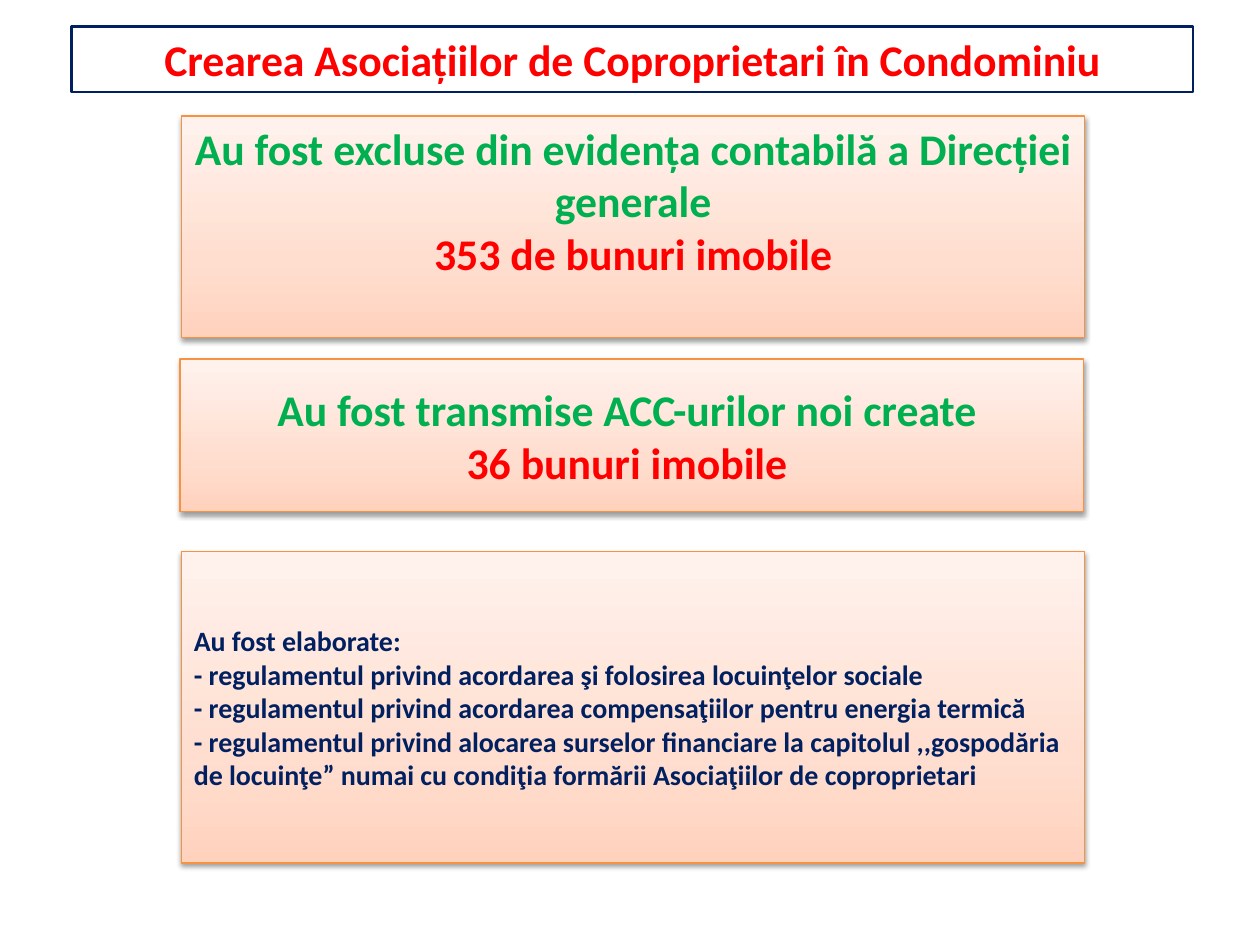
import copy

import lxml.etree
import pptx
import pptx.dml.color
import pptx.enum.shapes
import pptx.enum.text
import pptx.oxml.ns
import pptx.util

Inches = pptx.util.Inches
Pt = pptx.util.Pt
RGBColor = pptx.dml.color.RGBColor
ALIGN = pptx.enum.text.PP_ALIGN
qn = pptx.oxml.ns.qn

RED = RGBColor(0xFF, 0x00, 0x00)
GREEN = RGBColor(0x00, 0xB0, 0x50)
NAVY = RGBColor(0x00, 0x20, 0x60)
ORANGE = RGBColor(0xF6, 0x92, 0x40)
BLACK = RGBColor(0x00, 0x00, 0x00)
PEACH_STOPS = (
    (0, RGBColor(0xFF, 0xD2, 0xBD)),
    (0.35, RGBColor(0xFF, 0xDE, 0xD0)),
    (1, RGBColor(0xFF, 0xF2, 0xED)),
)


def add_box(page, left, top, width, height, line_color, line_width):
    """Add an unfilled, outlined rectangle without a shadow."""
    box = page.shapes.add_shape(
        pptx.enum.shapes.MSO_SHAPE.RECTANGLE,
        Inches(left), Inches(top), Inches(width), Inches(height),
    )
    box.shadow.inherit = False
    box.fill.background()
    box.line.color.rgb = line_color
    box.line.width = Pt(line_width)
    box.text_frame.word_wrap = True
    return box


def add_text(para, text, size=25, color=RED, align=ALIGN.CENTER):
    """Write bold text into a paragraph."""
    para.alignment = align
    span = para.add_run()
    span.text = text
    span.font.name = "Calibri"
    span.font.size = Pt(size)
    span.font.bold = True
    span.font.color.rgb = color


def add_gradient(box):
    """Fill a box with the peach gradient, darkest at the bottom."""
    box.fill.gradient()
    box.fill.gradient_angle = 90
    stop_list = box.element.spPr.find(qn("a:gradFill")).find(qn("a:gsLst"))
    stop_list.append(copy.deepcopy(stop_list[-1]))
    for stop, (position, color) in zip(box.fill.gradient_stops, PEACH_STOPS):
        stop.position = position
        stop.color.rgb = color


def add_shadow(box):
    """Give a box a soft shadow falling straight down."""
    effects = box.element.spPr.find(qn("a:effectLst"))
    shadow = lxml.etree.SubElement(
        effects, qn("a:outerShdw"), blurRad=str(Pt(3.1)), dist=str(Pt(1.6)),
        dir="5400000", rotWithShape="0",
    )
    color = lxml.etree.SubElement(shadow, qn("a:srgbClr"), val=str(BLACK))
    lxml.etree.SubElement(color, qn("a:alpha"), val="38000")


def add_title(page, left, top, width, height):
    """Add the framed slide title."""
    box = add_box(page, left, top, width, height, NAVY, 1.5)
    add_text(box.text_frame.paragraphs[0],
             "Crearea Asociațiilor de Coproprietari în Condominiu")


def add_card(page, left, top, width, height, lines, bottom=0.05, **text_format):
    """Add a peach card with one paragraph per (text, color) line."""
    box = add_box(page, left, top, width, height, ORANGE, 0.75)
    add_gradient(box)
    add_shadow(box)
    frame = box.text_frame
    frame.vertical_anchor = pptx.enum.text.MSO_ANCHOR.MIDDLE
    frame.margin_bottom = Inches(bottom)
    for index, (text, color) in enumerate(lines):
        para = frame.add_paragraph() if index else frame.paragraphs[0]
        add_text(para, text, color=color, **text_format)


def main():
    """Build and save the slide."""
    deck = pptx.Presentation()
    deck.slide_width = Inches(10)
    deck.slide_height = Inches(7.5)
    page = deck.slides.add_slide(deck.slide_layouts[6])
    add_title(page, 0.57, 0.21, 8.9, 0.52)
    add_card(page, 1.44, 0.92, 7.17, 1.76, (
        ("Au fost excluse din evidența contabilă a Direcției generale", GREEN),
        ("353 de bunuri imobile", RED),
    ), bottom=0.47)
    add_card(page, 1.43, 2.85, 7.17, 1.21, (
        ("Au fost transmise ACC-urilor noi create ", GREEN),
        ("36 bunuri imobile ", RED),
    ))
    regulations = (
        "Au fost elaborate:",
        "- regulamentul privind acordarea şi folosirea locuinţelor sociale",
        "- regulamentul privind acordarea compensaţiilor pentru energia termică",
        "- regulamentul privind alocarea surselor financiare la capitolul "
        ",,gospodăria de locuinţe” numai cu condiţia formării Asociaţiilor "
        "de coproprietari",
    )
    add_card(page, 1.44, 4.38, 7.17, 2.47,
             [(text, NAVY) for text in regulations],
             size=16, align=ALIGN.LEFT)
    deck.save("out.pptx")


if __name__ == "__main__":
    main()
